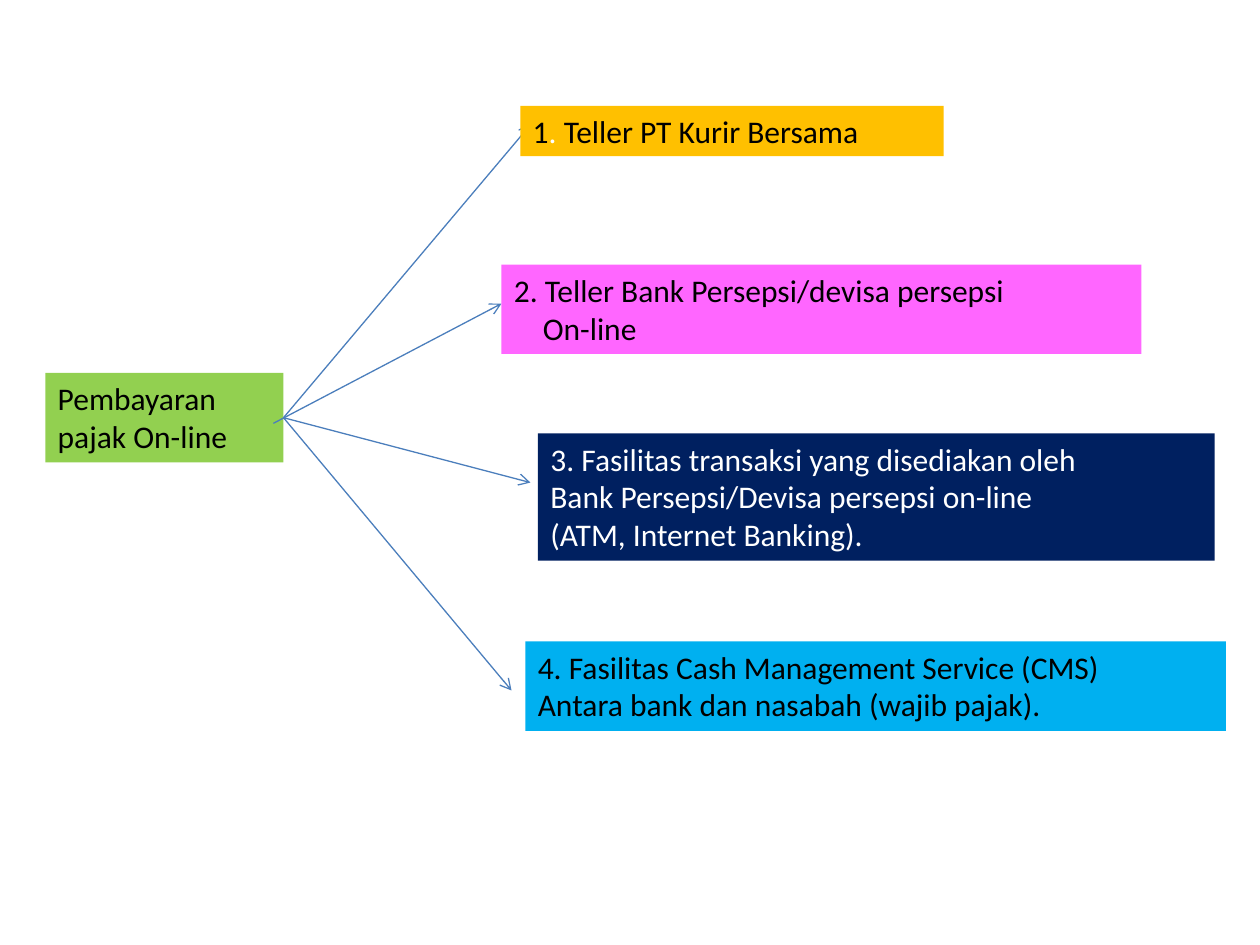
from lxml.etree import SubElement
from pptx import Presentation
from pptx.dml.color import RGBColor
from pptx.enum.shapes import MSO_CONNECTOR, MSO_SHAPE
from pptx.enum.text import MSO_ANCHOR, PP_ALIGN
from pptx.oxml.ns import qn
from pptx.util import Inches, Pt

THEME = {
    "font": "Calibri", "size": 18, "line": "4B7EBC", "line_width": 0.75,
    "dark": "000000", "light": "FFFFFF",
    "green": "92D050", "amber": "FFC000", "pink": "FF66FF",
    "navy": "002060", "blue": "00B0F0",
}

# Each box: position, fill and paragraphs; a paragraph is a list of (text, colour) runs
SOURCE = {
    "at": (0.36, 2.96, 1.89, 0.71), "fill": "green",
    "text": [[("Pembayaran", "dark")], [("pajak On-line", "dark")]],
}
CHANNELS = [
    {"at": (4.13, 0.84, 3.36, 0.4), "fill": "amber", "tip": (4.21, 0.99),
     "text": [[("1", "dark"), (". ", "light"), ("Teller PT Kurir Bersama", "dark")]]},
    {"at": (3.98, 2.1, 5.08, 0.71), "fill": "pink", "tip": (3.98, 2.41),
     "start": (2.17, 3.36), "indent": 0.23,
     "text": [[("2. Teller Bank Persepsi/devisa persepsi", "dark")],
              [("On-line", "dark")]]},
    {"at": (4.27, 3.44, 5.37, 1.01), "fill": "navy", "tip": (4.21, 3.83),
     "text": [[("3. Fasilitas transaksi yang disediakan oleh", "light")],
              [("Bank Persepsi/Devisa persepsi on-line", "light")],
              [("(ATM, Internet Banking).", "light")]]},
    {"at": (4.17, 5.09, 5.56, 0.71), "fill": "blue", "tip": (4.06, 5.48),
     "text": [[("4. Fasilitas Cash Management Service (CMS)", "dark")],
              [("Antara bank dan nasabah (wajib pajak).", "dark")]]},
]


def color(name):
    return RGBColor.from_string(THEME[name])


def add_box(slide, box):
    sp = slide.shapes.add_shape(MSO_SHAPE.RECTANGLE, *map(Inches, box["at"]))
    sp.shadow.inherit = False
    sp.fill.solid()
    sp.fill.fore_color.rgb = color(box["fill"])
    sp.line.fill.background()
    tf = sp.text_frame
    tf.word_wrap = True
    tf.vertical_anchor = MSO_ANCHOR.TOP
    for i, runs in enumerate(box["text"]):
        p = tf.add_paragraph() if i else tf.paragraphs[0]
        p.alignment = PP_ALIGN.LEFT
        if i and "indent" in box:
            p._p.get_or_add_pPr().set("marL", str(Inches(box["indent"])))
        for text, ink in runs:
            r = p.add_run()
            r.text = text
            r.font.name = THEME["font"]
            r.font.size = Pt(THEME["size"])
            r.font.color.rgb = color(ink)
    return sp


def add_arrow(slide, source, channel):
    x, y, w, h = SOURCE["at"]
    start = channel.get("start", (x + w, y + h / 2))
    cxn = slide.shapes.add_connector(
        MSO_CONNECTOR.STRAIGHT, *map(Inches, start + channel["tip"]))
    if "start" not in channel:
        cxn.begin_connect(source, 3)
    cxn.line.color.rgb = color("line")
    cxn.line.width = Pt(THEME["line_width"])
    SubElement(cxn.line._get_or_add_ln(), qn("a:tailEnd"), type="arrow")
    SubElement(cxn._element.spPr, qn("a:effectLst"))


def main():
    prs = Presentation()
    prs.slide_width, prs.slide_height = Inches(10), Inches(7.5)
    slide = prs.slides.add_slide(prs.slide_layouts[6])

    # Source box, then each arrow beneath its channel box
    source = add_box(slide, SOURCE)
    for channel in CHANNELS:
        add_arrow(slide, source, channel)
        add_box(slide, channel)

    prs.save("out.pptx")


if __name__ == "__main__":
    main()
